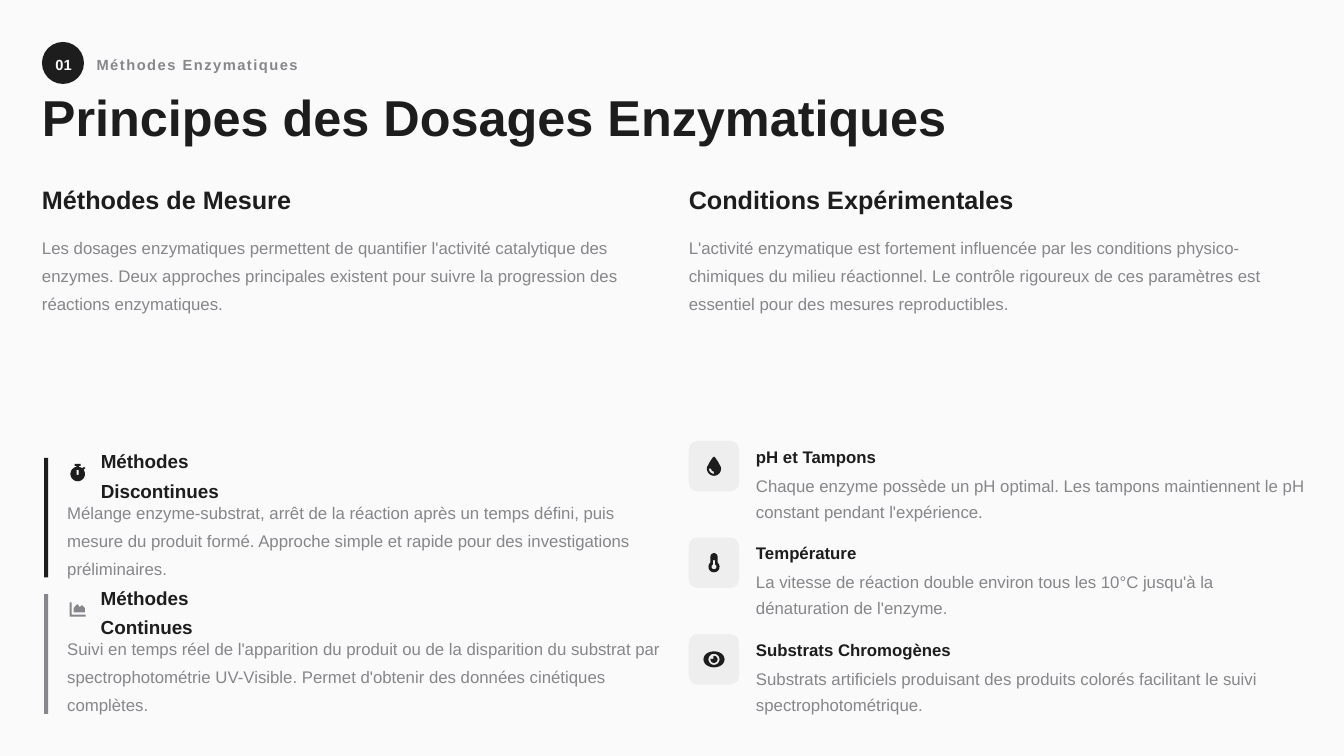
from math import cos, radians, sin

from lxml.etree import SubElement
from pptx import Presentation
from pptx.dml.color import RGBColor
from pptx.enum.shapes import MSO_SHAPE as Shape
from pptx.enum.text import MSO_ANCHOR as Anchor, MSO_AUTO_SIZE as AutoSize, PP_ALIGN as Align
from pptx.oxml.ns import qn
from pptx.util import Inches, Pt

INK, GREY, PAPER = "1D1D1D", "86868B", "FAFAFA"


def rgb(color):
    return RGBColor.from_string(color)


def arc(cx, cy, rx, ry, start=0, end=360, steps=24):
    """Points along an ellipse, clockwise from the right, angles in degrees."""
    angles = [radians(start + (end - start) * i / steps) for i in range(steps + 1)]
    return [(cx + rx * cos(a), cy + ry * sin(a)) for a in angles]


# Each icon is a list of contours in thousandths of an inch around its centre;
# a contour inside another one cuts a hole.
STOPWATCH = [
    arc(0, 15, 72, 72, -80, -52) + [(62, -55), (75, -42)] + arc(0, 15, 72, 72, -36, 260)
    + [(-12, -65), (-30, -65), (-30, -85), (30, -85), (30, -65), (12, -65)],
    [(-10, -25), (10, -25), (10, 25), (-10, 25)],
]
AREA_CHART = [
    [(-80, -65), (-60, -65), (-60, 55), (80, 55), (80, 75), (-80, 75)],
    [(-40, -10), (-8, -45), (3, -45), (22, -18), (38, -35), (48, -35),
     (72, -10), (72, 35), (-40, 35)],
]
DROP = [
    arc(0, 25, 70, 70, -15, 195) + [(-40, -45), (-8, -92), (8, -92), (40, -45)],
    arc(0, 25, 50, 50, 90, 180) + arc(0, 25, 28, 28, 180, 90),
]
THERMOMETER = [
    arc(0, 40, 55, 55, -50, 230) + arc(0, -60, 35, 35, 180, 360),
    arc(0, 40, 25, 25, -65, 245) + [(-10, -25), (10, -25)],
]
EYE = [
    arc(0, 0, 105, 80),
    arc(0, 0, 55, 55),
    arc(0, 0, 35, 35, -100, 190) + [(-5, -5)],
]

COLUMNS = [
    (1, "Méthodes de Mesure",
     "Les dosages enzymatiques permettent de quantifier l'activité catalytique des enzymes. "
     "Deux approches principales existent pour suivre la progression des réactions "
     "enzymatiques."),
    (16.4, "Conditions Expérimentales",
     "L'activité enzymatique est fortement influencée par les conditions physico-chimiques "
     "du milieu réactionnel. Le contrôle rigoureux de ces paramètres est essentiel pour des "
     "mesures reproductibles."),
]
METHODS = [
    (STOPWATCH, INK, 4.9, "Méthodes Discontinues",
     "Mélange enzyme-substrat, arrêt de la réaction après un temps défini, puis mesure du "
     "produit formé. Approche simple et rapide pour des investigations préliminaires."),
    (AREA_CHART, GREY, 4.3, "Méthodes Continues",
     "Suivi en temps réel de l'apparition du produit ou de la disparition du substrat par "
     "spectrophotométrie UV-Visible. Permet d'obtenir des données cinétiques complètes."),
]
CONDITIONS = [
    (DROP, "pH et Tampons",
     "Chaque enzyme possède un pH optimal. Les tampons maintiennent le pH constant pendant "
     "l'expérience."),
    (THERMOMETER, "Température",
     "La vitesse de réaction double environ tous les 10°C jusqu'à la dénaturation de "
     "l'enzyme."),
    (EYE, "Substrats Chromogènes",
     "Substrats artificiels produisant des produits colorés facilitant le suivi "
     "spectrophotométrique."),
]


class GridSlide:
    """A slide on a grid of 32 columns and 18 rows, in one font."""

    font = "Arial"

    def __init__(self, prs):
        self.col, self.row = prs.slide_width / 32, prs.slide_height / 18
        self.slide = prs.slides.add_slide(prs.slide_layouts[5])
        self.shapes = self.slide.shapes
        fill = self.slide.background.fill
        fill.solid()
        fill.fore_color.rgb = rgb(PAPER)

    def box(self, x, y, w, h):
        return round(x * self.col), round(y * self.row), round(w * self.col), round(h * self.row)

    def set_text(self, sp, text, size, color, bold, leading, spacing=0):
        tf = sp.text_frame
        tf.word_wrap = True
        tf.auto_size = AutoSize.NONE
        tf.vertical_anchor = Anchor.MIDDLE
        tf.margin_left = tf.margin_top = tf.margin_right = tf.margin_bottom = 0
        p = tf.paragraphs[0]
        p.alignment = Align.LEFT
        p.line_spacing = leading
        r = p.add_run()
        r.text = text
        r.font.name, r.font.size, r.font.bold = self.font, Pt(size), bold
        r.font.color.rgb = rgb(color)
        if spacing:
            r._r.get_or_add_rPr().set("spc", str(round(spacing * 100)))

    def title(self, x, y, w, h, text):
        sp = self.shapes.title
        sp.left, sp.top, sp.width, sp.height = self.box(x, y, w, h)
        self.set_text(sp, text, 36, INK, True, 0.8)

    def text(self, x, y, w, h, text, size=12, color=GREY, bold=False, leading=1.4, spacing=0):
        sp = self.shapes.add_textbox(*self.box(x, y, w, h))
        self.set_text(sp, text, size, color, bold, leading, spacing)

    def paint(self, sp, color, opacity=100):
        sp.shadow.inherit = False
        sp.line.fill.background()
        sp.fill.solid()
        sp.fill.fore_color.rgb = rgb(color)
        if opacity < 100:
            clr = sp.fill._xPr.find(qn("a:solidFill"))[0]
            SubElement(clr, qn("a:alpha")).set("val", str(opacity * 1000))

    def shape(self, kind, x, y, w, h, color, opacity=100, radius=None):
        sp = self.shapes.add_shape(kind, *self.box(x, y, w, h))
        if radius is not None:
            sp.adjustments[0] = radius
        self.paint(sp, color, opacity)

    def icon(self, x, y, contours, color):
        """Draw the contours centred on a grid point."""
        first, *others = contours
        builder = self.shapes.build_freeform(*first[0], scale=Inches(0.001))
        builder.add_line_segments(first[1:])
        for contour in others:
            builder.move_to(*contour[0])
            builder.add_line_segments(contour[1:])
        cx, cy, _, _ = self.box(x, y, 0, 0)
        self.paint(builder.convert_to_shape(cx, cy), color)


def main():
    prs = Presentation()
    prs.slide_width, prs.slide_height = Inches(13.33), Inches(7.5)
    s = GridSlide(prs)

    s.shape(Shape.OVAL, 1, 1, 1, 1, INK)
    s.text(1.32, 1.25, 0.55, 0.5, "01", 10.5, PAPER, True, 1.2)
    s.text(2.3, 1.25, 5.55, 0.5, "Méthodes Enzymatiques", 10.5, GREY, True, 1.2, 1.1)
    s.title(1, 2.3, 30.6, 1.2, "Principes des Dosages Enzymatiques")

    for x, heading, intro in COLUMNS:
        s.text(x, 4.3, 14.9, 0.8, heading, 18, INK, True, 1.1)
        s.text(x, 5.5, 14.8, 1.95, intro)

    for i, (icon, color, width, heading, body) in enumerate(METHODS):
        y = 10.9 + 3.25 * i
        s.shape(Shape.RECTANGLE, 1.05, y, 0.1, 2.85, color)
        s.icon(1.85, y + 0.35, icon, color)
        s.text(2.4, y, width, 0.7, heading, 13.5, INK, True, 1.3)
        s.text(1.6, y + 0.9, 14.2, 1.95, body)

    for i, (icon, heading, body) in enumerate(CONDITIONS):
        y = 10.5 + 2.3 * i
        s.shape(Shape.ROUNDED_RECTANGLE, 16.4, y, 1.2, 1.2, INK, opacity=5, radius=0.17)
        s.icon(17, y + 0.6, icon, INK)
        s.text(18, y, 13.2, 0.6, heading, 12, INK, True, 1.3)
        s.text(18, y + 0.7, 13.2, 1.2, body, leading=1.3)

    prs.save("out.pptx")


if __name__ == "__main__":
    main()
